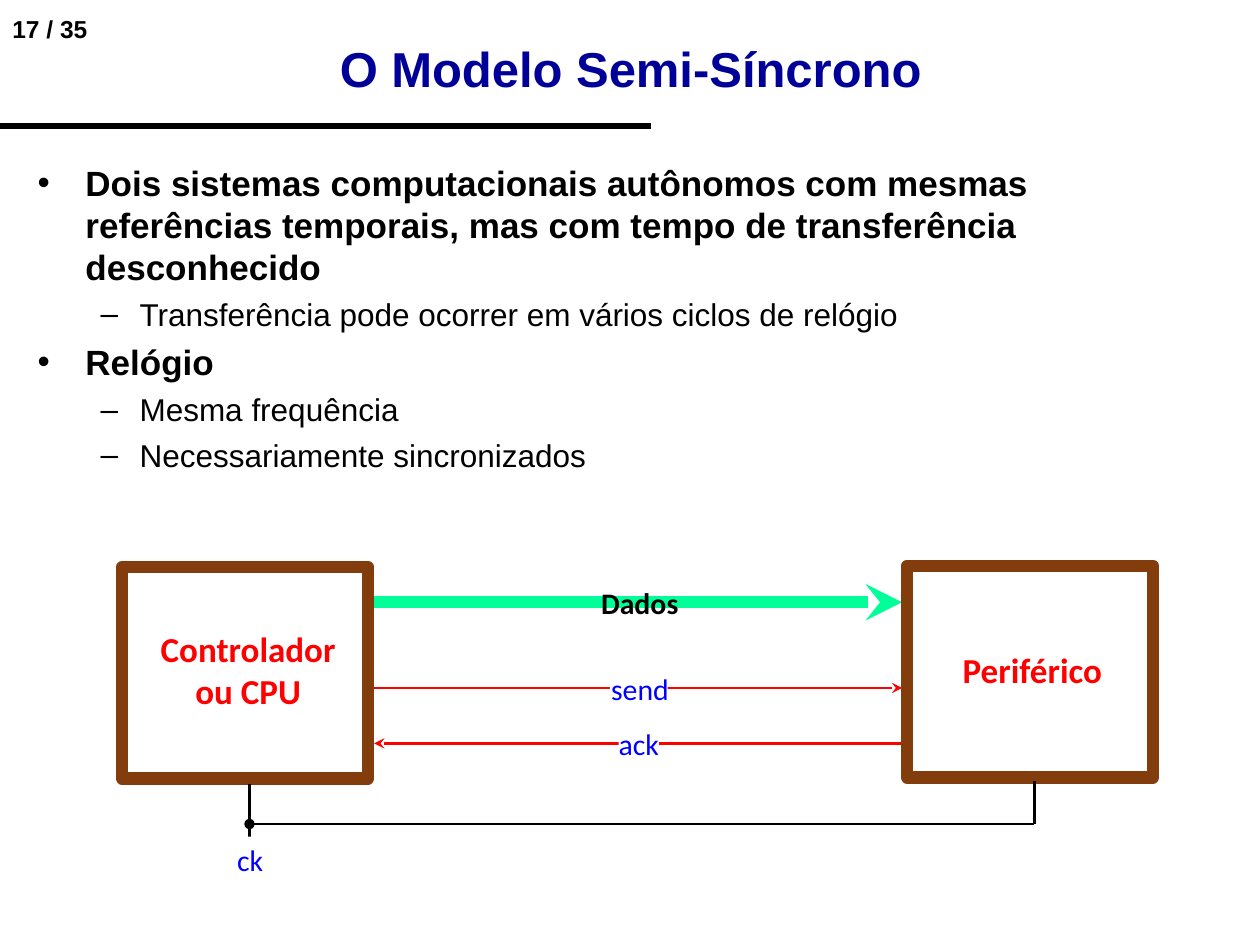
import pptx
import pptx.util
import pptx.dml.color
import pptx.enum.shapes
import pptx.enum.text
import pptx.oxml.ns
from dataclasses import dataclass
from lxml import etree

Inches = pptx.util.Inches
Pt = pptx.util.Pt
Align = pptx.enum.text.PP_ALIGN
Anchor = pptx.enum.text.MSO_ANCHOR
qn = pptx.oxml.ns.qn

COLORS = {
    "black": "000000", "white": "FFFFFF", "title": "000099", "blue": "0000FF",
    "red": "FF0000", "green": "00FF99", "brown": "833C0B",
}


@dataclass
class Wire:
    start: tuple[float, float]
    end: tuple[float, float]
    color: str = "black"
    width: float = 1.38
    head: str = ""
    tail: str = ""


@dataclass
class Label:
    area: tuple[float, float, float, float]
    lines: tuple[str, ...]
    size: float = 17
    color: str = "blue"
    bold: bool = False
    align: Align = Align.LEFT
    wrap: bool = False
    font: str = "Calibri"
    inset: bool = False


@dataclass
class Bullet:
    text: str
    level: int = 0
    align: Align = Align.JUSTIFY


@dataclass
class BulletStyle:
    mark: str
    size: float
    bold: bool
    left: float
    hanging: float


STYLES = (
    BulletStyle("•", 20, True, 0.38, 0.38),
    BulletStyle("–", 18, False, 0.81, 0.31),
)

BULLETS = (
    Bullet("Dois sistemas computacionais autônomos com mesmas referências "
           "temporais, mas com tempo de transferência desconhecido", 0, Align.LEFT),
    Bullet("Transferência pode ocorrer em vários ciclos de relógio", 1),
    Bullet("Relógio"),
    Bullet("Mesma frequência", 1),
    Bullet("Necessariamente sincronizados", 1),
)


def rgb(color: str) -> pptx.dml.color.RGBColor:
    return pptx.dml.color.RGBColor.from_string(COLORS[color])


def format_font(font, name: str, size: float, color: str, bold: bool) -> None:
    font.name = name
    font.size = Pt(size)
    font.bold = bold
    font.color.rgb = rgb(color)


def draw_wire(page, wire: Wire) -> None:
    line = page.shapes.add_connector(
        pptx.enum.shapes.MSO_CONNECTOR.STRAIGHT,
        *(Inches(value) for value in wire.start + wire.end))
    line.line.color.rgb = rgb(wire.color)
    line.line.width = Pt(wire.width)
    outline = line.line._get_or_add_ln()
    for tag, kind in (("a:headEnd", wire.head), ("a:tailEnd", wire.tail)):
        if kind:
            etree.SubElement(outline, qn(tag), type=kind)
    etree.SubElement(line._element.spPr, qn("a:effectLst"))


def draw_box(page, area: tuple[float, float, float, float], border: str = "") -> None:
    box = page.shapes.add_shape(
        pptx.enum.shapes.MSO_SHAPE.RECTANGLE, *(Inches(value) for value in area))
    box.shadow.inherit = False
    if border:
        box.fill.background()
        box.line.color.rgb = rgb(border)
        box.line.width = Pt(7)
    else:
        box.fill.solid()
        box.fill.fore_color.rgb = rgb("white")
        box.line.fill.background()


def draw_label(page, label: Label) -> None:
    box = page.shapes.add_textbox(*(Inches(value) for value in label.area))
    frame = box.text_frame
    frame.word_wrap = label.wrap
    frame.auto_size = pptx.enum.text.MSO_AUTO_SIZE.SHAPE_TO_FIT_TEXT
    if not label.inset:
        frame.margin_left = frame.margin_right = 0
        frame.margin_top = frame.margin_bottom = 0
    para = frame.paragraphs[0]
    para.alignment = label.align
    for index, text in enumerate(label.lines):
        if index:
            para.add_line_break()
        span = para.add_run()
        span.text = text
        format_font(span.font, label.font, label.size, label.color, label.bold)


def draw_bullets(page) -> None:
    frame = page.shapes.add_textbox(
        Inches(0.2), Inches(1.23), Inches(9.5), Inches(3.04)).text_frame
    frame.word_wrap = True
    for index, bullet in enumerate(BULLETS):
        style = STYLES[bullet.level]
        para = frame.add_paragraph() if index else frame.paragraphs[0]
        para.level = bullet.level
        para.alignment = bullet.align
        if index:
            para.space_before = Pt(style.size * 0.24)
        properties = para._p.get_or_add_pPr()
        properties.set("marL", str(Inches(style.left)))
        properties.set("indent", str(-Inches(style.hanging)))
        etree.SubElement(properties, qn("a:buFont"), typeface="Arial")
        etree.SubElement(properties, qn("a:buChar"), char=style.mark)
        span = para.add_run()
        span.text = bullet.text
        format_font(span.font, "Arial", style.size, "black", style.bold)


def draw_title(page) -> None:
    title = page.shapes.title
    title.left, title.top = Inches(0.42), Inches(0.33)
    title.width, title.height = Inches(9.17), Inches(0.42)
    frame = title.text_frame
    frame.auto_size = pptx.enum.text.MSO_AUTO_SIZE.NONE
    frame.vertical_anchor = Anchor.MIDDLE
    para = frame.paragraphs[0]
    para.alignment = Align.CENTER
    span = para.add_run()
    span.text = "O Modelo Semi-Síncrono"
    format_font(span.font, "Arial", 28, "title", True)


def draw_diagram(page) -> None:
    left, right = 2.97, 7.16
    draw_wire(page, Wire((left, 4.78), (right, 4.78), "green", 7, tail="stealth"))
    draw_label(page, Label((4.77, 4.64, 0.78, 0.39), ("Dados",), color="black", bold=True))
    draw_wire(page, Wire((left, 5.46), (right, 5.46), "red", tail="stealth"))
    draw_box(page, (4.84, 5.32, 0.46, 0.28))
    draw_label(page, Label((4.85, 5.32, 0.58, 0.37), ("send",)))
    draw_wire(page, Wire((left, 5.9), (right, 5.9), "red", head="stealth"))
    draw_box(page, (4.91, 5.76, 0.32, 0.29))
    draw_label(page, Label((4.91, 5.76, 0.47, 0.39), ("ack",)))

    controller = (0.97, 4.5, 1.95, 1.68)
    draw_box(page, controller)
    draw_box(page, controller, "brown")
    draw_label(page, Label((1.27, 4.98, 1.4, 0.67), ("Controlador", "ou CPU"),
                           20, "red", True, Align.CENTER))
    draw_box(page, (7.26, 4.5, 1.86, 1.65))
    draw_box(page, (7.2, 4.49, 1.95, 1.68), "brown")
    draw_label(page, Label((7.64, 5.15, 1.18, 0.34), ("Periférico",),
                           20, "red", True, wrap=True))

    draw_wire(page, Wire((1.98, 6.22), (1.98, 6.66)))
    draw_box(page, (1.69, 6.64, 0.56, 0.36))
    draw_label(page, Label((1.88, 6.68, 0.21, 0.29), ("ck",), align=Align.CENTER))
    draw_wire(page, Wire((8.21, 6.2), (8.21, 6.54)))
    draw_wire(page, Wire((1.98, 6.54), (8.21, 6.54), head="oval"))


def main() -> None:
    deck = pptx.Presentation()
    deck.slide_width, deck.slide_height = Inches(10), Inches(7.5)
    page = deck.slides.add_slide(deck.slide_layouts[5])
    draw_title(page)
    draw_label(page, Label((0, 0.06, 0.9, 0.34), ("17 / 35",), 14, "black", True,
                           font="Arial", inset=True))
    draw_wire(page, Wire((5.17, 1), (0, 1), width=3))
    draw_bullets(page)
    draw_diagram(page)
    deck.save("out.pptx")


if __name__ == "__main__":
    main()
